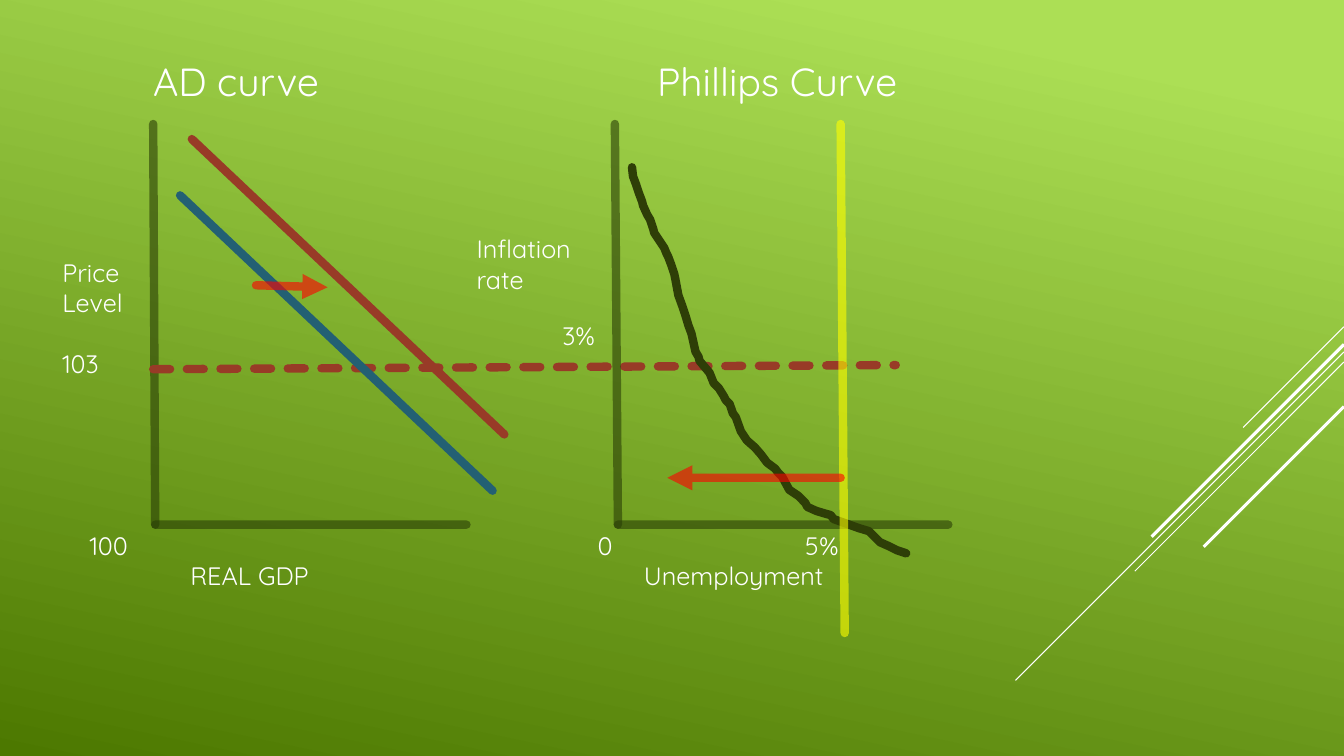
from lxml.etree import SubElement as Sub
from pptx import Presentation
from pptx.dml.color import RGBColor as RGB
from pptx.enum.dml import MSO_LINE as Dash
from pptx.enum.shapes import MSO_CONNECTOR as Link
from pptx.oxml.ns import qn
from pptx.util import Inches, Pt

COLS, ROWS = 160, 90
HUE = {
    "lime": "ACDF55", "moss": "4C7800", "white": "FFFFFF", "axis": "293E06",
    "rust": "983B27", "blue": "236073", "curve": "2E3E07",
    "yellow": "FFFF00", "red": "FF0000",
}
BEND = [
    (17, 43), (18, 52), (21, 60), (24, 69), (27, 77), (28, 81), (32, 90),
    (35, 95), (38, 104), (39, 108), (49, 123), (51, 128), (53, 132),
    (56, 140), (59, 149), (60, 154), (63, 170), (67, 181), (70, 190),
    (73, 200), (76, 208), (80, 226), (83, 231), (84, 235), (94, 247),
    (98, 257), (103, 262), (108, 270), (110, 274), (114, 278), (117, 287),
    (120, 291), (125, 305), (131, 314), (139, 321), (145, 328), (151, 336),
    (159, 342), (162, 346), (166, 350), (173, 363), (182, 369), (189, 376),
    (191, 380), (200, 384), (210, 387), (214, 388), (217, 392), (242, 401),
    (252, 404), (259, 411), (263, 415), (272, 419), (280, 423), (289, 426),
]


def unit(n):
    return Inches(n / 12)


def pen(shape, hue, size=6, alpha=100, dash=None, head=False, cap="rnd"):
    line = shape.line
    line.color.rgb = RGB.from_string(HUE[hue])
    line.width = Pt(size)
    if dash:
        line.dash_style = dash
    props = shape._element.spPr
    ln = props.find(qn("a:ln"))
    ln.set("cap", cap)
    if alpha < 100:
        Sub(ln.find(".//" + qn("a:srgbClr")), qn("a:alpha"), val=str(alpha * 1000))
    if head:
        Sub(ln, qn("a:tailEnd"), type="triangle")
    if props.find(qn("a:effectLst")) is None:
        Sub(props, qn("a:effectLst"))


def rule(slide, box, start, end, hue, **style):
    x, y = box
    ends = [unit(n) for n in (x + start[0], y + start[1], x + end[0], y + end[1])]
    pen(slide.shapes.add_connector(Link.STRAIGHT, *ends), hue, **style)


def label(slide, box, text, col, row, wide=24, high=4.8, size=18):
    x, y = box
    frame = slide.shapes.add_textbox(
        unit(x + col), unit(y + row), unit(wide), unit(high)).text_frame
    frame.word_wrap = True
    run = frame.paragraphs[0].add_run()
    run.text = text
    run.font.size = Pt(size)
    run.font.name = "Quicksand"
    run.font.color.rgb = RGB.from_string(HUE["white"])


def axes(slide, box, lean, wide):
    foot = (lean, 47.7)
    rule(slide, box, (0, 0), foot, "axis", alpha=60)
    rule(slide, box, foot, (wide, 47.7), "axis", alpha=60)


def streaks(slide, box):
    for row, run, size in [(38.9, 12, 0.75), (41.9, 39.1, 0.75), (43.1, 24.9, 0.75),
                           (41, 22.9, 2.25), (48.4, 16.7, 2.25)]:
        rule(slide, box, (0, row), (-run, row + run), "white", size=size, cap="flat")


def demand(slide, box):
    axes(slide, box, 0.24, 37.3)
    rule(slide, box, (0, 29.2), (88.4, 28.7), "rust", dash=Dash.SQUARE_DOT)
    for col, row, hue in [(3.2, 8.5, "blue"), (4.6, 1.8, "rust")]:
        rule(slide, box, (col, row), (col + 37.2, row + 35.16), hue)
    rule(slide, box, (12.24, 19.2), (20.76, 19.44), "red", alpha=60, head=True)
    label(slide, box, "AD curve", -1.2, -8.5, wide=36, high=6.8, size=28)
    label(slide, box, "Price Level", -12, 15.24, wide=12, high=8.5)
    label(slide, box, "103", -12, 26.16, wide=10)
    label(slide, box, "100", -8.76, 47.76, wide=10)
    label(slide, box, "REAL GDP", 3.24, 51.36)


def phillips(slide, box):
    axes(slide, box, 0.36, 39.7)
    path = slide.shapes.build_freeform(*BEND[0], scale=9144)
    path.add_line_segments(BEND[1:], close=False)
    bend = path.convert_to_shape(unit(box[0]), unit(box[1]))
    bend.shadow.inherit = False
    bend.fill.background()
    pen(bend, "curve")
    label(slide, box, "Phillips Curve", 3.84, -8.5, wide=40, high=6.8, size=28)
    label(slide, box, "Inflation rate", -17.64, 12.48, wide=14.5, high=8.5)
    rule(slide, box, (26.88, 0), (27.36, 60.6), "yellow", alpha=60)
    rule(slide, box, (26.88, 42.12), (6.24, 42.12), "red", alpha=60, head=True)
    label(slide, box, "0", -3.24, 47.76, wide=6)
    label(slide, box, "5%", 21.48, 47.76, wide=8)
    label(slide, box, "Unemployment", 2.28, 51.36)
    label(slide, box, "3%", -7.44, 22.8, wide=8)


def main():
    deck = Presentation()
    deck.slide_width, deck.slide_height = unit(COLS), unit(ROWS)
    slide = deck.slides.add_slide(deck.slide_layouts[6])
    fill = slide.background.fill
    fill.gradient()
    fill.gradient_angle = 258
    for stop, hue, place in zip(fill.gradient_stops, ("lime", "moss"), (0.1, 1)):
        stop.color.rgb = RGB.from_string(HUE[hue])
        stop.position = place
    streaks(slide, (COLS, 0))
    demand(slide, (18.24, 14.76))
    phillips(slide, (73.2, 14.76))
    deck.save("out.pptx")


if __name__ == "__main__":
    main()
